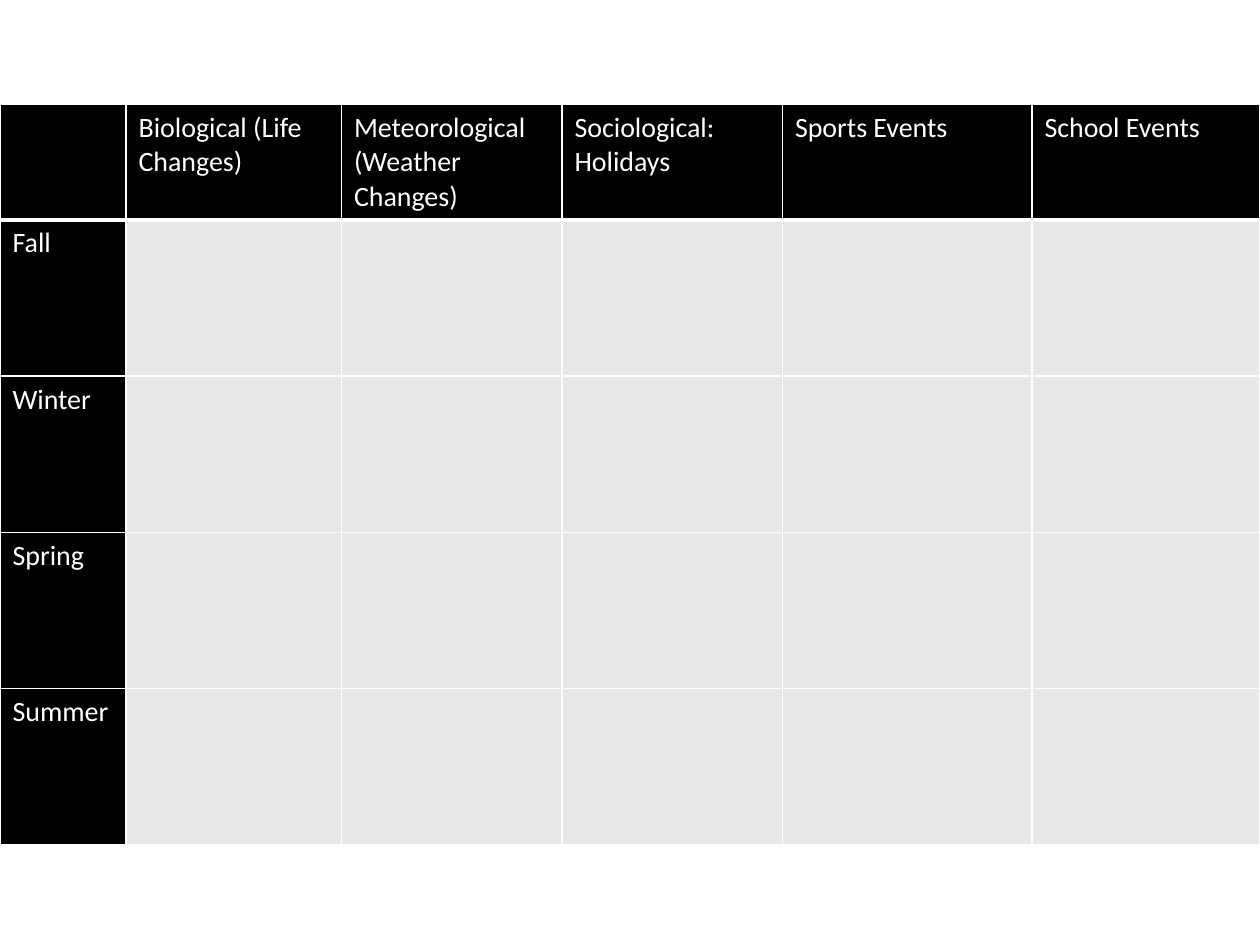
import lxml.etree
import pptx
import pptx.dml.color
import pptx.oxml.ns
import pptx.util

COLORS = {"heading": "000000", "body": "E7E7E7", "line": "FFFFFF", "text": "FFFFFF"}
FONT, TEXT_SIZE = "Calibri", 16
SLIDE_WIDTH, SLIDE_HEIGHT = 10, 7.5

TOPICS = [
    "",
    "Biological (Life Changes)",
    "Meteorological (Weather Changes)",
    "Sociological: Holidays",
    "Sports Events",
    "School Events",
]
SEASONS = ["Fall", "Winter", "Spring", "Summer"]

COLUMN_WIDTHS = [1, 1.71, 1.75, 1.75, 1.98, 1.81]
HEADER_HEIGHT, SEASON_HEIGHT = 0.67, 1.24
TABLE_TOP, TABLE_HEIGHT = 0.83, 5.85
THIN, THICK = 1, 3


def rgb(name):
    return pptx.dml.color.RGBColor.from_string(COLORS[name])


def add_borders(cell, bottom_width):
    """Line all four sides; borders must come before the fill in the cell."""
    properties = cell._tc.get_or_add_tcPr()
    widths = {"lnL": THIN, "lnR": THIN, "lnT": THIN, "lnB": bottom_width}
    for side, width in widths.items():
        line = lxml.etree.SubElement(
            properties, pptx.oxml.ns.qn(f"a:{side}"), w=str(pptx.util.Pt(width))
        )
        fill = lxml.etree.SubElement(line, pptx.oxml.ns.qn("a:solidFill"))
        lxml.etree.SubElement(fill, pptx.oxml.ns.qn("a:srgbClr"), val=COLORS["line"])


def format_cell(cell, text, is_header, is_heading):
    add_borders(cell, THICK if is_header else THIN)
    cell.fill.solid()
    cell.fill.fore_color.rgb = rgb("heading" if is_heading else "body")
    cell.text_frame.text = text
    font = cell.text_frame.paragraphs[0].font
    font.size = pptx.util.Pt(TEXT_SIZE)
    for span in cell.text_frame.paragraphs[0].runs:
        span.font.name = FONT
        span.font.size = pptx.util.Pt(TEXT_SIZE)
        span.font.bold = False
        span.font.color.rgb = rgb("text")


def main():
    deck = pptx.Presentation()
    deck.slide_width = pptx.util.Inches(SLIDE_WIDTH)
    deck.slide_height = pptx.util.Inches(SLIDE_HEIGHT)
    slide = deck.slides.add_slide(deck.slide_layouts[6])

    rows = [TOPICS] + [[season] + [""] * (len(TOPICS) - 1) for season in SEASONS]
    frame = slide.shapes.add_table(
        len(rows), len(TOPICS), 0, pptx.util.Inches(TABLE_TOP),
        deck.slide_width, pptx.util.Inches(TABLE_HEIGHT),
    )
    table = frame.table
    table.first_row = table.first_col = True
    table.horz_banding = False

    for column, width in zip(table.columns, COLUMN_WIDTHS):
        column.width = pptx.util.Inches(width)
    for r, texts in enumerate(rows):
        table.rows[r].height = pptx.util.Inches(SEASON_HEIGHT if r else HEADER_HEIGHT)
        for c, text in enumerate(texts):
            format_cell(table.cell(r, c), text, r == 0, r == 0 or c == 0)
    frame.height = pptx.util.Inches(TABLE_HEIGHT)

    deck.save("out.pptx")


if __name__ == "__main__":
    main()
